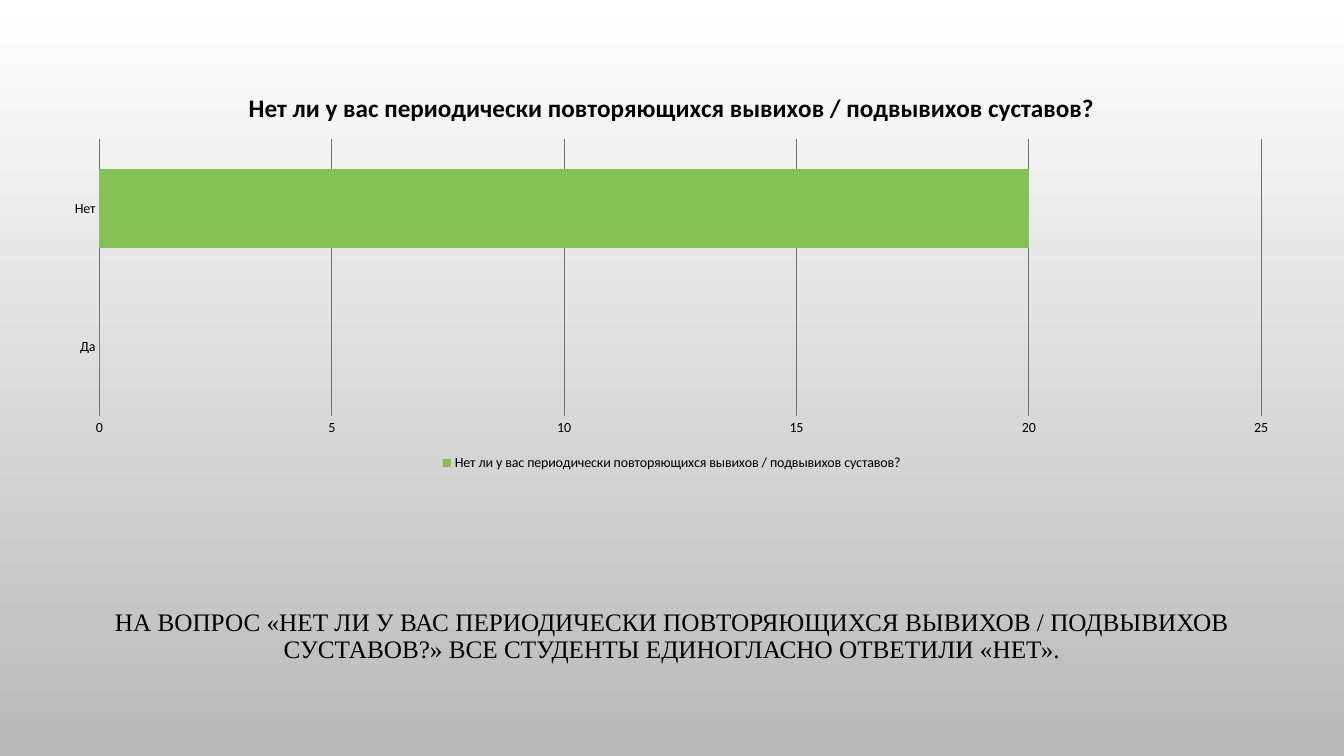
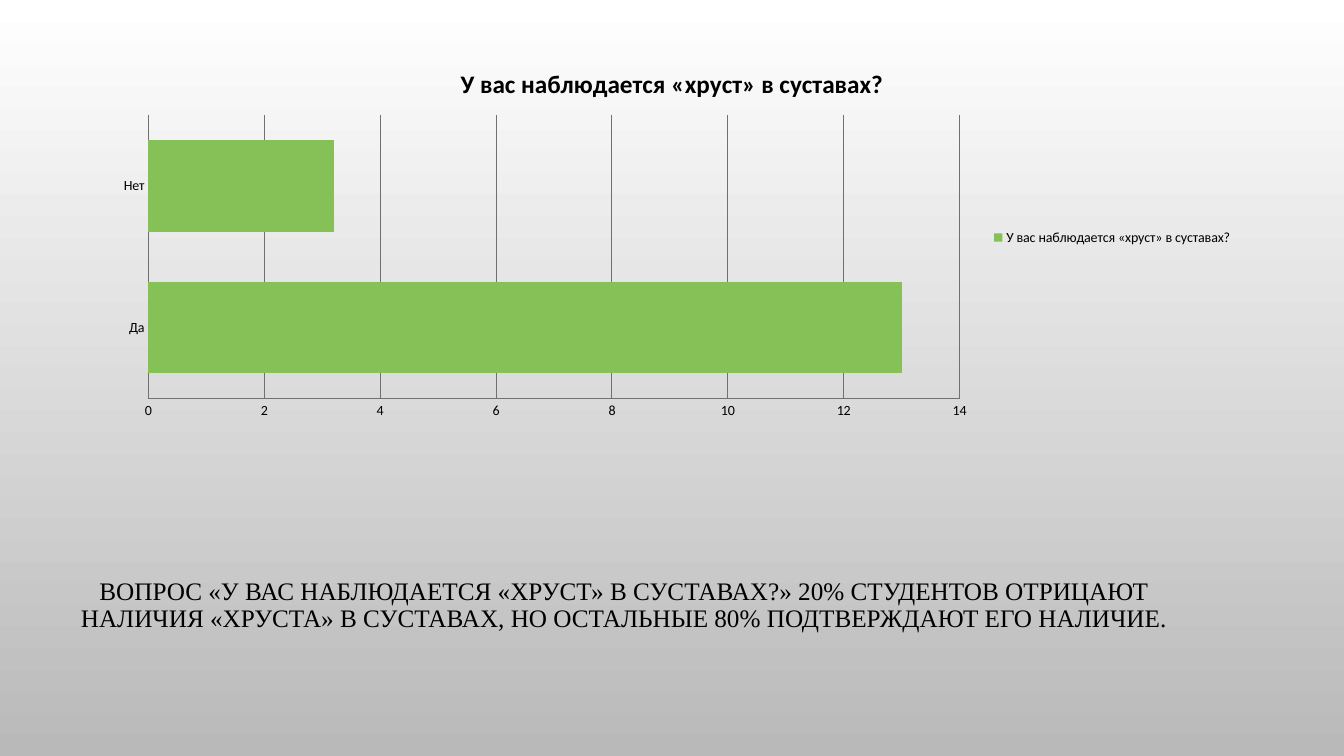
from pptx import Presentation
from pptx import util as u
from pptx.chart import data as chart_data
from pptx.dml import color
from pptx.enum import chart as charts, text

PX = 12192000 / 1344
COLORS = {
    "black": "000000",
    "grid": "707070",
    "bar": "86C157",
    "top": "FFFFFF",
    "bottom": "B9B9B9",
}
CHART_FONT = "Calibri"
TITLE_FONT = "Times New Roman"


def px(length):
    return u.Emu(round(length * PX))


def rgb(name):
    return color.RGBColor.from_string(COLORS[name])


def style_font(font, size, name, bold=False):
    font.size = u.Pt(size)
    font.name = name
    font.bold = bold
    font.color.rgb = rgb("black")


def write_text(frame, words, size=18, name=CHART_FONT, bold=False, spacing=None):
    para = frame.paragraphs[0]
    para.alignment = text.PP_ALIGN.CENTER
    para.line_spacing = spacing
    span = para.add_run()
    span.text = words
    style_font(span.font, size, name, bold)


def draw_line(line):
    line.color.rgb = rgb("grid")
    line.width = u.Pt(0.75)


def set_background(master):
    fill = master.background.fill
    fill.gradient()
    fill.gradient_angle = 270
    for stop, name, position in zip(fill.gradient_stops, ("top", "bottom"), (0, 1)):
        stop.color.rgb = rgb(name)
        stop.position = position


def place_title(page, box, words, bottom_inset):
    title = page.shapes.title
    title.left, title.top, title.width, title.height = map(px, box)
    frame = title.text_frame
    frame.word_wrap = True
    frame.auto_size = text.MSO_AUTO_SIZE.NONE
    frame.vertical_anchor = text.MSO_ANCHOR.MIDDLE
    frame.margin_bottom = px(bottom_inset)
    write_text(frame, words, name=TITLE_FONT, spacing=0.9)


def style_axes(chart, maximum, unit, value_line):
    for axis in (chart.category_axis, chart.value_axis):
        axis.major_tick_mark = charts.XL_TICK_MARK.NONE
        axis.minor_tick_mark = charts.XL_TICK_MARK.NONE
        style_font(axis.tick_labels.font, 10, CHART_FONT)
        draw_line(axis.format.line)
    chart.category_axis.has_major_gridlines = False
    values = chart.value_axis
    values.minimum_scale = 0
    values.maximum_scale = maximum
    values.major_unit = unit
    values.has_major_gridlines = True
    draw_line(values.major_gridlines.format.line)
    if not value_line:
        values.format.line.fill.background()


def place_chart(page, box, question, answers, kind, legend, gap, overlap,
                maximum, unit, value_line):
    table = chart_data.CategoryChartData()
    table.categories = ["Да", "Нет"]
    table.add_series(question, answers)
    chart = page.shapes.add_chart(kind, *map(px, box), table).chart
    style_font(chart.font, 10, CHART_FONT)

    chart.has_title = True
    write_text(chart.chart_title.text_frame, question, bold=True)
    chart.chart_title.include_in_layout = False

    chart.has_legend = True
    chart.legend.position = legend
    chart.legend.include_in_layout = False
    style_font(chart.legend.font, 10, CHART_FONT)

    plot = chart.plots[0]
    plot.vary_by_categories = False
    plot.gap_width = gap
    plot.overlap = overlap
    bars = plot.series[0].format
    bars.fill.solid()
    bars.fill.fore_color.rgb = rgb("bar")
    style_axes(chart, maximum, unit, value_line)


def add_question_page(deck, title, chart):
    page = deck.slides.add_slide(deck.slide_layouts[5])
    place_title(page, **title)
    place_chart(page, **chart)


def main():
    deck = Presentation()
    deck.slide_width, deck.slide_height = px(1344), px(756)
    set_background(deck.slide_master)

    add_question_page(
        deck,
        title=dict(
            box=(101, 580, 1142, 176),
            words="НА ВОПРОС «НЕТ ЛИ У ВАС ПЕРИОДИЧЕСКИ ПОВТОРЯЮЩИХСЯ ВЫВИХОВ / ПОДВЫВИХОВ "
                  "СУСТАВОВ?» ВСЕ СТУДЕНТЫ ЕДИНОГЛАСНО ОТВЕТИЛИ «НЕТ».",
            bottom_inset=67,
        ),
        chart=dict(
            box=(50, 72, 1243, 403),
            question="Нет ли у вас периодически повторяющихся вывихов / подвывихов суставов?",
            answers=(0, 20),
            kind=charts.XL_CHART_TYPE.BAR_CLUSTERED,
            legend=charts.XL_LEGEND_POSITION.BOTTOM,
            gap=75, overlap=-25, maximum=25, unit=5, value_line=False,
        ),
    )
    add_question_page(
        deck,
        title=dict(
            box=(53, 518, 1142, 176),
            words="ВОПРОС «У ВАС НАБЛЮДАЕТСЯ «ХРУСТ» В СУСТАВАХ?» 20% СТУДЕНТОВ ОТРИЦАЮТ "
                  "НАЛИЧИЯ «ХРУСТА» В СУСТАВАХ, НО ОСТАЛЬНЫЕ 80% ПОДТВЕРЖДАЮТ ЕГО НАЛИЧИЕ.",
            bottom_inset=5,
        ),
        chart=dict(
            box=(101, 49, 1142, 377),
            question="У вас наблюдается «хруст» в суставах?",
            answers=(13, 3.2),
            kind=charts.XL_CHART_TYPE.BAR_STACKED,
            legend=charts.XL_LEGEND_POSITION.RIGHT,
            gap=55, overlap=100, maximum=14, unit=2, value_line=True,
        ),
    )
    deck.save("out.pptx")


if __name__ == "__main__":
    main()
